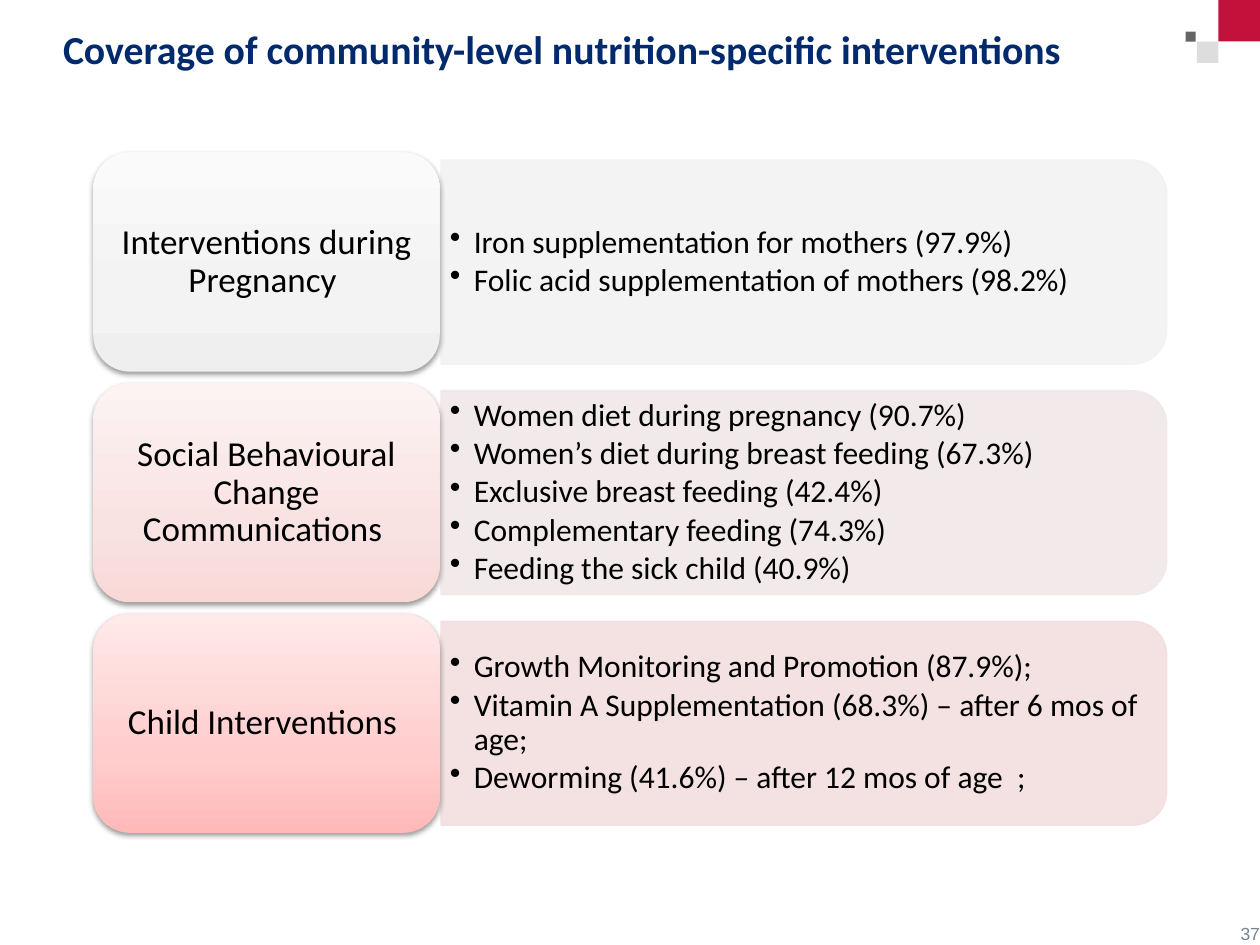
from dataclasses import dataclass

from lxml.etree import SubElement
from pptx import Presentation
from pptx.dml.color import RGBColor
from pptx.enum.shapes import MSO_SHAPE as Shape
from pptx.enum.text import MSO_ANCHOR as Anchor, MSO_AUTO_SIZE as AutoSize, PP_ALIGN as Align
from pptx.oxml.ns import qn
from pptx.util import Pt

EMU_PER_PX = 9144  # 100 px to the inch


@dataclass(frozen=True)
class Theme:
    body_font: str = "Calibri"
    number_font: str = "Arial"
    title_size: float = 22.7
    card_size: int = 20
    bullet_size: int = 18
    number_size: int = 10
    title: str = "002A6C"
    text: str = "000000"
    number: str = "768591"
    dark_square: str = "666666"
    light_square: str = "DDDDDD"
    red_square: str = "C2113A"


THEME = Theme()

# Card label, bar colour, card gradient from bottom to top, bullets
GROUPS = [
    ("Interventions during Pregnancy ", "F2F2F2", ("EFEFEF", "F3F3F3", "FAFAFA"),
     ["Iron supplementation for mothers (97.9%)",
      "Folic acid supplementation of mothers (98.2%)"]),
    ("Social Behavioural Change Communications ", "F1E8E8", ("F9D8D8", "F9E2E2", "FDF3F3"),
     ["Women diet during pregnancy (90.7%)",
      "Women’s diet during breast feeding (67.3%)",
      "Exclusive breast feeding (42.4%)",
      "Complementary feeding (74.3%)",
      "Feeding the sick child (40.9%)"]),
    ("Child Interventions ", "F3DEDE", ("FFB9B9", "FFCDCD", "FFE9E9"),
     ["Growth Monitoring and Promotion (87.9%);",
      "Vitamin A Supplementation (68.3%) – after 6 mos of age;",
      "Deworming (41.6%) – after 12 mos of age  ;"]),
]
GRADIENT_STOPS = (0, 35, 100)

# Rows: a card on the left, a bar with bullets on the right
FIRST_TOP, ROW_PITCH = 121, 183
CARD_LEFT, CARD_WIDTH, CARD_HEIGHT = 74, 275, 174
BAR_LEFT, BAR_WIDTH, BAR_HEIGHT = 350, 576, 162
BULLETS_WIDTH, BULLETS_HEIGHT = 568, 146


def px(*lengths):
    return [round(length * EMU_PER_PX) for length in lengths]


def set_all(target, values):
    for name, value in values.items():
        setattr(target, name, value)


def set_frame(frame, anchor, side=0, end=0):
    side, end = px(side, end)
    set_all(frame, dict(word_wrap=True, auto_size=AutoSize.NONE, vertical_anchor=anchor,
                        margin_left=side, margin_right=side, margin_top=end, margin_bottom=end))


def write(paragraph, text, size, color, font=THEME.body_font, bold=False, **layout):
    set_all(paragraph, layout)
    run = paragraph.add_run()
    run.text = text
    set_all(run.font, dict(name=font, size=Pt(size), bold=bold))
    run.font.color.rgb = RGBColor.from_string(color)


def add_box(slide, kind, box, color=None):
    box_shape = slide.shapes.add_shape(kind, *px(*box))
    box_shape.shadow.inherit = False
    box_shape.line.fill.background()
    if color:
        box_shape.fill.solid()
        box_shape.fill.fore_color.rgb = RGBColor.from_string(color)
    return box_shape


def add_title(slide, text):
    title = slide.shapes.title
    set_all(title, dict(zip(("left", "top", "width", "height"), px(50, 20, 891, 78))))
    set_frame(title.text_frame, Anchor.TOP)
    write(title.text_frame.paragraphs[0], text, THEME.title_size, THEME.title,
          bold=True, alignment=Align.LEFT)


def add_corner_squares(slide):
    for left, top, side, color in ((941, 25, 8, THEME.dark_square),
                                   (950, 33, 17, THEME.light_square),
                                   (967, 0, 33, THEME.red_square)):
        add_box(slide, Shape.RECTANGLE, (left, top, side, side), color)


def add_bar(slide, middle, color):
    # Turned a quarter so that the two rounded corners face right
    left = BAR_LEFT + (BAR_WIDTH - BAR_HEIGHT) // 2
    bar = add_box(slide, Shape.ROUND_2_SAME_RECTANGLE,
                  (left, middle - BAR_WIDTH // 2, BAR_HEIGHT, BAR_WIDTH), color)
    bar.rotation = 90
    bar.line.color.rgb = RGBColor.from_string(color)
    bar.line.width = Pt(0.75)
    for rgb in bar._element.spPr.iter(qn("a:srgbClr")):
        SubElement(rgb, qn("a:alpha"), val="90000")


def add_bullets(slide, middle, items):
    box = slide.shapes.add_textbox(
        *px(BAR_LEFT, middle - BULLETS_HEIGHT // 2, BULLETS_WIDTH, BULLETS_HEIGHT))
    frame = box.text_frame
    set_frame(frame, Anchor.MIDDLE, 7, 4)
    indent, = px(19)
    for index, item in enumerate(items):
        paragraph = frame.add_paragraph() if index else frame.paragraphs[0]
        properties = paragraph._p.get_or_add_pPr()
        set_values = {"marL": str(indent), "indent": str(-indent)}
        properties.attrib.update(set_values)
        SubElement(SubElement(properties, qn("a:buClr")), qn("a:srgbClr"), val=THEME.text)
        SubElement(properties, qn("a:buChar"), char="•")
        write(paragraph, item, THEME.bullet_size, THEME.text, level=1, line_spacing=0.9,
              space_before=Pt(2.5 if index else 0), alignment=Align.LEFT)


def add_card(slide, top, label, gradient):
    card = add_box(slide, Shape.ROUNDED_RECTANGLE, (CARD_LEFT, top, CARD_WIDTH, CARD_HEIGHT))
    # Three-stop gradient running upwards
    card.fill.gradient()
    card.fill.gradient_angle = 90
    properties = card._element.spPr
    stops = properties.find(".//" + qn("a:gsLst"))
    for stop in list(stops):
        stops.remove(stop)
    for percent, color in zip(GRADIENT_STOPS, gradient):
        stop = SubElement(stops, qn("a:gs"), pos=str(percent * 1000))
        SubElement(stop, qn("a:srgbClr"), val=color)
    # Soft shadow below the card
    shadow = SubElement(properties.find(qn("a:effectLst")), qn("a:outerShdw"),
                        blurRad=str(Pt(3.1)), dist=str(Pt(1.6)), dir="5400000", rotWithShape="0")
    shadow_color = SubElement(shadow, qn("a:srgbClr"), val=THEME.text)
    SubElement(shadow_color, qn("a:alpha"), val="38000")
    # Label
    set_frame(card.text_frame, Anchor.MIDDLE, 9, 5)
    write(card.text_frame.paragraphs[0], label, THEME.card_size, THEME.text,
          alignment=Align.CENTER, line_spacing=0.9)


def add_slide_number(slide, number):
    box = slide.shapes.add_textbox(*px(967, 719, 33, 30))
    set_frame(box.text_frame, Anchor.BOTTOM)
    write(box.text_frame.paragraphs[0], number, THEME.number_size, THEME.number,
          THEME.number_font, alignment=Align.RIGHT)


def main():
    deck = Presentation()
    deck.slide_width, deck.slide_height = px(1000, 750)
    slide = deck.slides.add_slide(deck.slide_layouts[5])

    add_corner_squares(slide)
    add_title(slide, "Coverage of community-level nutrition-specific interventions")
    for row, (label, bar_color, gradient, items) in enumerate(GROUPS):
        top = FIRST_TOP + row * ROW_PITCH
        middle = top + CARD_HEIGHT // 2
        add_bar(slide, middle, bar_color)
        add_bullets(slide, middle, items)
        add_card(slide, top, label, gradient)
    add_slide_number(slide, "37")

    deck.save("out.pptx")


if __name__ == "__main__":
    main()
